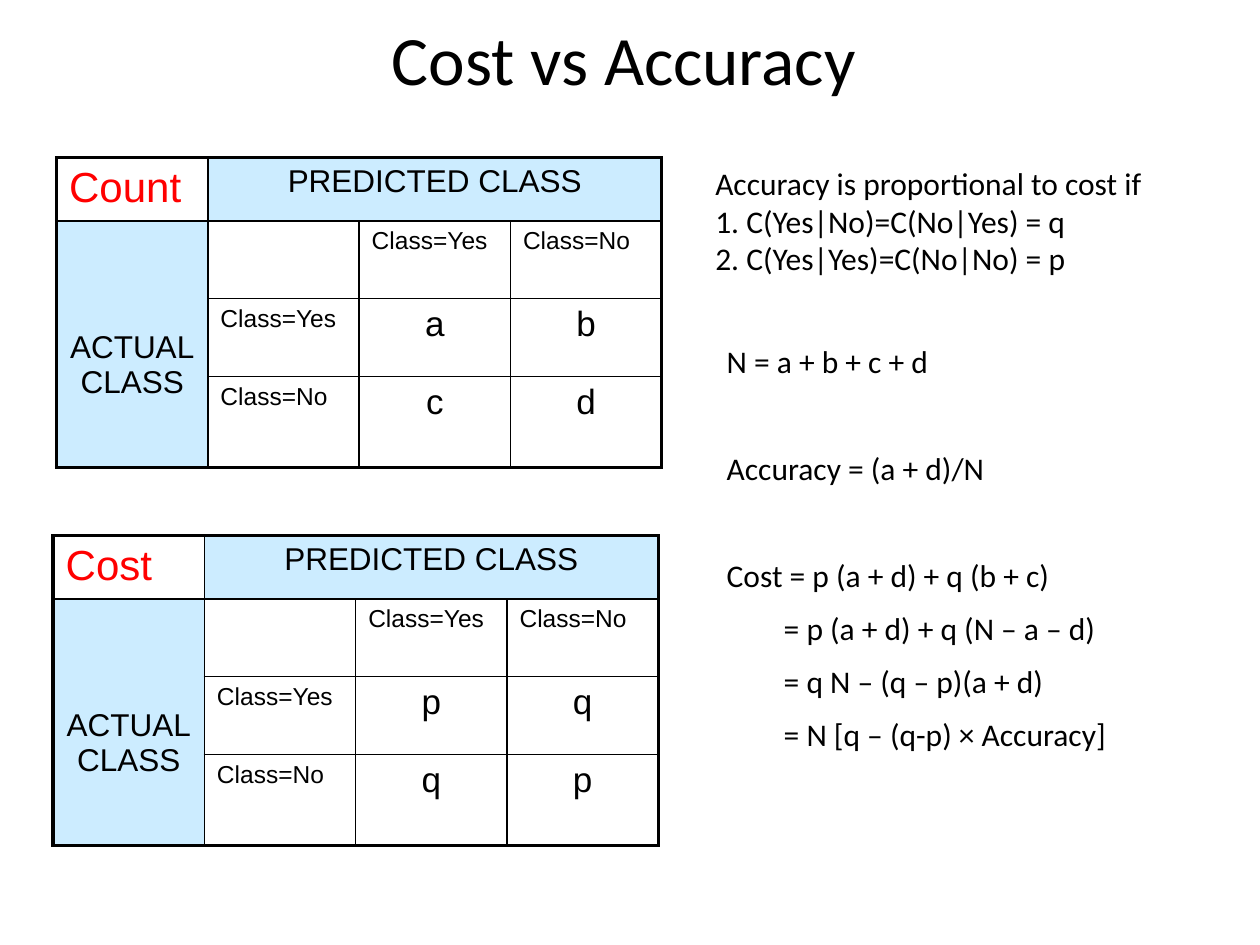
"""Build the slide that relates classification cost to accuracy."""
import pptx
import pptx.dml.color
import pptx.enum.text
import pptx.oxml
import pptx.oxml.ns
import pptx.util
from pptx.util import Cm, Pt

BLACK = pptx.dml.color.RGBColor(0x00, 0x00, 0x00)
WHITE = pptx.dml.color.RGBColor(0xFF, 0xFF, 0xFF)
RED = pptx.dml.color.RGBColor(0xFF, 0x00, 0x00)
PALE_BLUE = pptx.dml.color.RGBColor(0xCC, 0xEC, 0xFF)
LEFT = pptx.enum.text.PP_ALIGN.LEFT
CENTER = pptx.enum.text.PP_ALIGN.CENTER
MIDDLE = pptx.enum.text.MSO_ANCHOR.MIDDLE
TOP = pptx.enum.text.MSO_ANCHOR.TOP


class SlideWriter:
    body_font = "Calibri"
    table_font = "Arial"
    column_width = Cm(3.05)
    row_heights = (Cm(1.24), Cm(1.57), Cm(1.57), Cm(1.83))
    inner_line, outer_line = Pt(1), Pt(2.25)

    def __init__(self, slide):
        self.slide = slide

    def style(self, paragraph, size, font, color=BLACK, align=LEFT):
        paragraph.alignment = align
        paragraph.font.size = Pt(size)
        paragraph.font.name = font
        paragraph.font.color.rgb = color

    def text(self, left, top, width, height, lines, size=18, align=LEFT, anchor=TOP):
        box = self.slide.shapes.add_textbox(Cm(left), Cm(top), Cm(width), Cm(height))
        frame = box.text_frame
        frame.word_wrap = True
        frame.vertical_anchor = anchor
        for index, (line, space_before, indent) in enumerate(lines):
            paragraph = frame.paragraphs[0] if index == 0 else frame.add_paragraph()
            paragraph.text = line
            self.style(paragraph, size, self.body_font, align=align)
            paragraph.space_before = Pt(space_before)
            if indent:
                paragraph._p.get_or_add_pPr().set("marL", str(Cm(indent)))

    def border(self, cell, edge, width):
        line = pptx.oxml.parse_xml(
            f'<a:ln{edge} {pptx.oxml.ns.nsdecls("a")} w="{width}"><a:solidFill>'
            f'<a:srgbClr val="{BLACK}"/></a:solidFill></a:ln{edge}>')
        cell._tc.get_or_add_tcPr().append(line)

    def cell(self, cell, row, column, content):
        last_row = row + (cell.span_height if cell.is_merge_origin else 1) == 4
        last_column = column + (cell.span_width if cell.is_merge_origin else 1) == 4
        edges = {"L": column == 0, "R": last_column, "T": row == 0, "B": last_row}
        for edge, is_outer in edges.items():
            if is_outer or not cell.is_spanned:
                self.border(cell, edge, self.outer_line if is_outer else self.inner_line)
        cell.fill.solid()
        cell.fill.fore_color.rgb = PALE_BLUE if (row == 0) != (column == 0) else WHITE
        if content:
            cell.text = content
            if row == column == 0:
                look = (24, self.table_font, RED, LEFT)
            elif row == 0 or column == 0:
                look = (18, self.table_font, BLACK, CENTER)
            elif row == 1 or column == 1:
                look = (14, self.table_font, BLACK, LEFT)
            else:
                look = (20, self.table_font, BLACK, CENTER)
            for paragraph in cell.text_frame.paragraphs:
                self.style(paragraph, *look)

    def matrix(self, left, top, heading, yes_row, no_row):
        grid = (
            (heading, "PREDICTED CLASS", "", ""),
            ("ACTUAL\vCLASS", "", "Class=Yes", "Class=No"),
            ("", "Class=Yes", *yes_row),
            ("", "Class=No", *no_row),
        )
        table = self.slide.shapes.add_table(
            4, 4, Cm(left), Cm(top), 4 * self.column_width, sum(self.row_heights)).table
        table.first_row = table.horz_banding = False
        for column in table.columns:
            column.width = self.column_width
        for row, height in zip(table.rows, self.row_heights):
            row.height = height
        table.cell(0, 1).merge(table.cell(0, 3))
        table.cell(1, 0).merge(table.cell(3, 0))
        for row, contents in enumerate(grid):
            for column, content in enumerate(contents):
                self.cell(table.cell(row, column), row, column, content)
        table.cell(1, 0).margin_top = Cm(2.2)


def main():
    presentation = pptx.Presentation()
    presentation.slide_width, presentation.slide_height = Cm(25.4), Cm(19.05)
    writer = SlideWriter(presentation.slides.add_slide(presentation.slide_layouts[6]))

    writer.text(1.07, 0.43, 23.01, 1.47, [("Cost vs Accuracy", 0, 0)],
                size=39.6, align=CENTER, anchor=MIDDLE)
    writer.matrix(1.14, 3.18, "Count", "ab", "cd")
    writer.matrix(1.07, 10.8, "Cost", "pq", "qp")

    step, section, indent = 8.7, 39.3, 1.15
    writer.text(14.4, 6.78, 9.96, 10.19, [
        ("N = a + b + c + d", 0, 0),
        ("Accuracy = (a + d)/N", section, 0),
        ("Cost = p (a + d) + q (b + c)", section, 0),
        ("= p (a + d) + q (N – a – d)", step, indent),
        ("= q N – (q – p)(a + d)", step, indent),
        ("= N [q – (q-p) × Accuracy]", step, indent),
    ])
    conditions = ("Accuracy is proportional to cost if",
                  "1. C(Yes|No)=C(No|Yes) = q",
                  "2. C(Yes|Yes)=C(No|No) = p")
    writer.text(14.17, 3.18, 10.36, 2.54, [("\v".join(conditions), 0, 0)])

    presentation.save("out.pptx")


if __name__ == "__main__":
    main()
